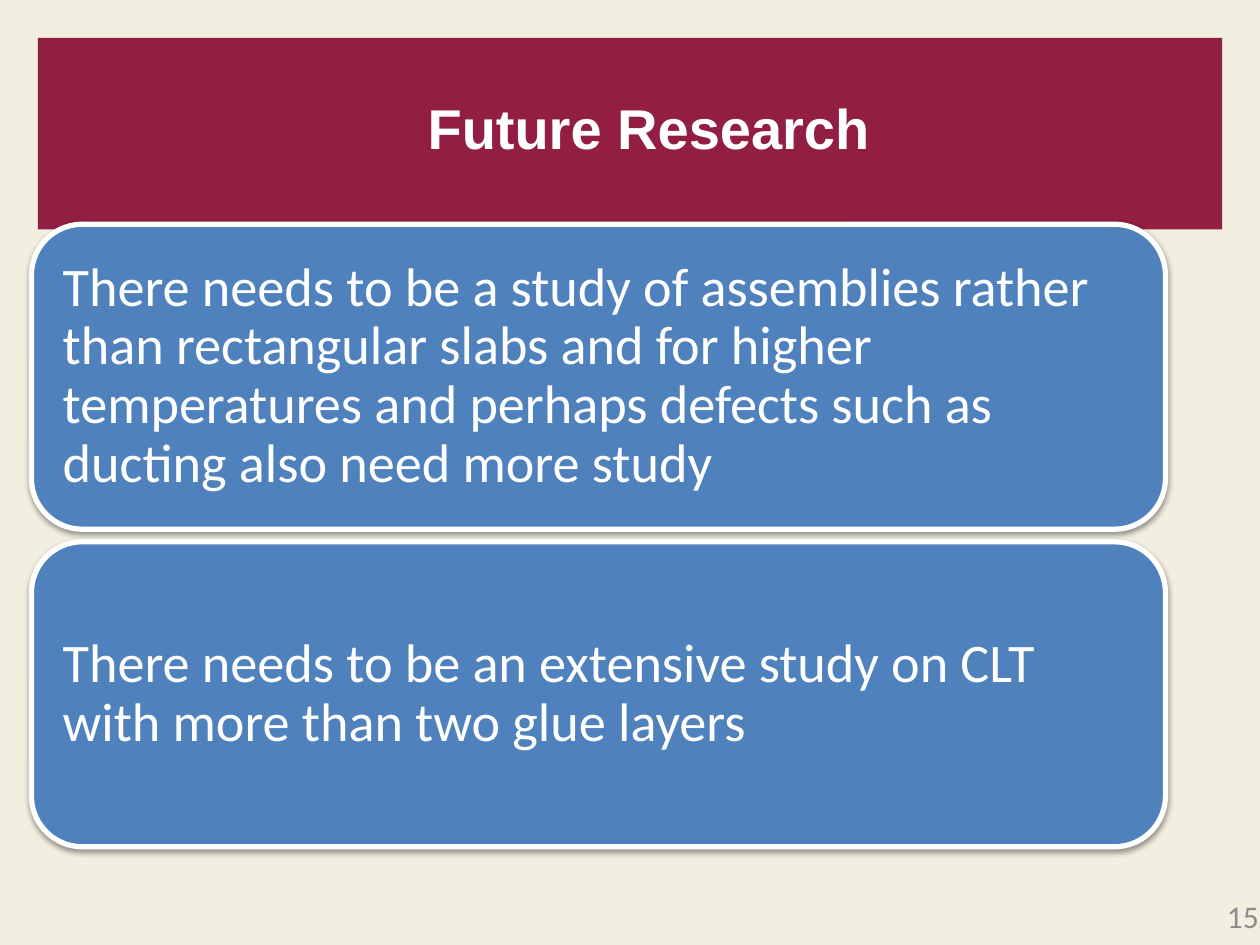
import pptx
import pptx.dml.color
import pptx.enum.shapes
import pptx.enum.text
import pptx.oxml
import pptx.util
from pptx.oxml.ns import nsdecls

Inches, Pt = pptx.util.Inches, pptx.util.Pt
RGB = pptx.dml.color.RGBColor
Shape = pptx.enum.shapes.MSO_SHAPE
Align = pptx.enum.text.PP_ALIGN
Anchor = pptx.enum.text.MSO_ANCHOR

CREAM = RGB(0xF2, 0xEF, 0xE0)
MAROON = RGB(0x92, 0x1E, 0x42)
BLUE = RGB(0x4F, 0x81, 0xBD)
WHITE = RGB(0xFF, 0xFF, 0xFF)
GREY = RGB(0x8C, 0x8C, 0x8C)

TITLE = "Future Research"
NEEDS = [
    "There needs to be a study of assemblies rather than rectangular slabs "
    "and for higher temperatures and perhaps defects such as ducting also "
    "need more study",
    "There needs to be an extensive study on CLT with more than two glue layers",
]
PAGE = "15"

LEFT, TOP, WIDE, HIGH, GAP = 0.25, 1.78, 9, 2.42, 0.1

SHADOW = (
    f'<a:effectLst {nsdecls("a")}>'
    '<a:outerShdw blurRad="39370" dist="20320" dir="5400000" rotWithShape="0">'
    '<a:srgbClr val="000000"><a:alpha val="38000"/></a:srgbClr>'
    '</a:outerShdw></a:effectLst>'
)


def write(shape, text, insets, anchor, para, font):
    frame = shape.text_frame
    sides = [Inches(n) for n in insets]
    names = ["margin_left", "margin_top", "margin_right", "margin_bottom"]
    look = dict(zip(names, sides), word_wrap=True, vertical_anchor=anchor)
    line = frame.paragraphs[0]
    line.text = text
    color = font.pop("color")
    for item, values in ((frame, look), (line, para), (line.font, font)):
        for name, value in values.items():
            setattr(item, name, value)
    line.font.color.rgb = color


def block(slide, kind, box, fill):
    shape = slide.shapes.add_shape(kind, *[Inches(n) for n in box])
    shape.shadow.inherit = False
    shape.fill.solid()
    shape.fill.fore_color.rgb = fill
    shape.line.fill.background()
    return shape


def card(slide, top, text):
    shape = block(slide, Shape.ROUNDED_RECTANGLE, (LEFT, top, WIDE, HIGH), BLUE)
    shape.line.color.rgb = WHITE
    shape.line.width = Pt(3)
    props = shape.element.spPr
    props.remove(props.find(pptx.oxml.ns.qn("a:effectLst")))
    props.append(pptx.oxml.parse_xml(SHADOW))
    write(shape, text, [0.13] * 4, Anchor.MIDDLE,
          dict(alignment=Align.LEFT, line_spacing=0.9),
          dict(name="Calibri", size=Pt(31), color=WHITE))


def main():
    deck = pptx.Presentation()
    deck.slide_width, deck.slide_height = Inches(10), Inches(7.5)
    slide = deck.slides.add_slide(deck.slide_layouts[6])
    slide.background.fill.solid()
    slide.background.fill.fore_color.rgb = CREAM

    head = block(slide, Shape.RECTANGLE, (0.3, 0.3, 9.4, 1.52), MAROON)
    write(head, TITLE, (0.3, 0.44, 0, 0), Anchor.TOP,
          dict(alignment=Align.CENTER),
          dict(name="Arial", size=Pt(32), bold=True, color=WHITE))

    for i, text in enumerate(NEEDS):
        card(slide, TOP + i * (HIGH + GAP), text)

    page = slide.shapes.add_textbox(
        Inches(7.69), Inches(7.12), Inches(2.3), Inches(0.38))
    write(page, PAGE, [0] * 4, Anchor.TOP, dict(alignment=Align.RIGHT),
          dict(name="Calibri", size=Pt(18), color=GREY))
    deck.save("out.pptx")


if __name__ == "__main__":
    main()
